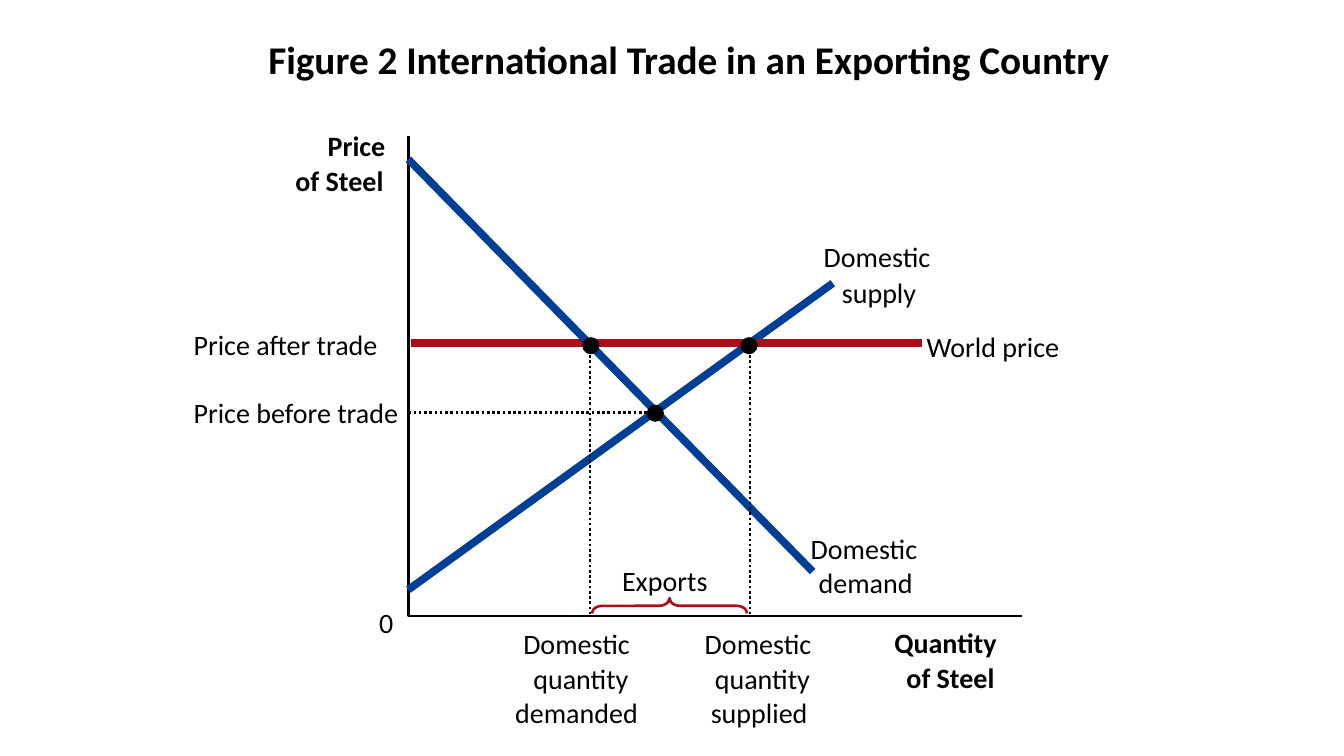
from lxml import etree
from pptx import Presentation
from pptx.dml.color import RGBColor
from pptx.enum.dml import MSO_LINE
from pptx.enum.shapes import MSO_CONNECTOR, MSO_SHAPE
from pptx.enum.text import MSO_ANCHOR, MSO_AUTO_SIZE, PP_ALIGN
from pptx.oxml.ns import qn
from pptx.util import Pt

EMU_PER_PX = 9144
STRAIGHT = MSO_CONNECTOR.STRAIGHT
OVAL, BRACE = MSO_SHAPE.OVAL, MSO_SHAPE.LEFT_BRACE
DOTTED = MSO_LINE.ROUND_DOT
MIDDLE, CENTER = MSO_ANCHOR.MIDDLE, PP_ALIGN.CENTER
FIT_SHAPE, NO_FIT = MSO_AUTO_SIZE.SHAPE_TO_FIT_TEXT, MSO_AUTO_SIZE.NONE
BLACK, BLUE, RED = "000000", "003F95", "AD0D1B"
THIN, THICK = 1.88, 5.5
FONT = "Calibri"
LINE_HEIGHT = 34
DOT = 17


def px(*lengths):
    return [round(n * EMU_PER_PX) for n in lengths]


def rgb(color):
    return RGBColor.from_string(color)


def format_runs(p, size, bold):
    for r in p.runs:
        r.font.name = FONT
        r.font.size = Pt(size)
        r.font.bold = bold
        r.font.color.rgb = rgb(BLACK)


def format_line(line, color, width):
    line.color.rgb = rgb(color)
    line.width = Pt(width)


def add_title(s, box):
    sp = s.shapes.title
    sp.left, sp.top, sp.width, sp.height = px(*box)
    tf = sp.text_frame
    tf.text = "Figure 2 International Trade in an Exporting Country"
    tf.auto_size = NO_FIT
    tf.vertical_anchor = MIDDLE
    p = tf.paragraphs[0]
    p.alignment = CENTER
    p.line_spacing = 0.8
    format_runs(p, 28, True)


def add_labels(shapes, box, labels, bold=False):
    for text, x, y, w in labels:
        tb = shapes.add_textbox(*px(box[0] + x, box[1] + y, w, LINE_HEIGHT))
        tf = tb.text_frame
        tf.margin_left = tf.margin_top = tf.margin_right = tf.margin_bottom = 0
        tf.word_wrap = False
        tf.auto_size = FIT_SHAPE
        tf.text = text
        format_runs(tf.paragraphs[0], 20, bold)


def add_line(shapes, box, start, end, color, width, dash=None):
    x, y = box[:2]
    line = shapes.add_connector(
        STRAIGHT, *px(x + start[0], y + start[1], x + end[0], y + end[1]))
    format_line(line.line, color, width)
    if dash:
        line.line.dash_style = dash
    etree.SubElement(line._element.spPr, qn("a:effectLst"))


def add_dot(shapes, box, x, y):
    dot = shapes.add_shape(
        OVAL, *px(box[0] + x - DOT / 2, box[1] + y - DOT / 2, DOT, DOT))
    dot.shadow.inherit = False
    dot.fill.solid()
    dot.fill.fore_color.rgb = rgb(BLACK)
    dot.line.fill.background()


def add_axes(s, box):
    x, y, w, h = box
    builder = s.shapes.build_freeform(*px(x, y), scale=1.0)
    builder.add_line_segments([px(x, y + h), px(x + w, y + h)], close=False)
    axes = builder.convert_to_shape()
    axes.shadow.inherit = False
    axes.fill.background()
    format_line(axes.line, BLACK, THIN)
    add_labels(s.shapes, box, [("Price", -80, -8, 58), ("of Steel", -112, 27, 88)], True)
    add_labels(s.shapes, box, [("0", -29, 466, 14)])
    add_labels(s.shapes, box, [("Quantity", 482, 486, 102), ("of Steel", 494, 520, 88)], True)


def add_curve(s, box, start, end, color, labels):
    shapes = s.shapes.add_group_shape().shapes
    add_line(shapes, box, start, end, color, THICK)
    add_labels(shapes, box, labels)


def add_exports(s, box):
    shapes = s.shapes.add_group_shape().shapes
    center_x, center_y, span, depth = box[0] + 259, box[1] + 466, 154, 15
    brace = shapes.add_shape(
        BRACE, *px(center_x - depth / 2, center_y - span / 2, depth, span))
    brace.rotation = 90
    brace.adjustments[0] = 0.7
    brace.shadow.inherit = False
    brace.fill.background()
    format_line(brace.line, RED, THIN)
    add_labels(shapes, box, [("Exports", 212, 424, 86)])


def add_guide(s, box, start, end, dot, labels):
    shapes = s.shapes.add_group_shape().shapes
    add_line(shapes, box, start, end, BLACK, THIN, DOTTED)
    add_dot(shapes, box, *dot)
    add_labels(shapes, box, labels)


def add_diagram(s, box):
    base = box[3]
    add_axes(s, box)
    add_curve(s, box, (0, 450), (421, 146), BLUE,
              [("Domestic", 412, 103, 107), ("supply", 430, 138, 74)])
    add_curve(s, box, (3, 205), (509, 205), RED,
              [("Price after trade", -213, 190, 185), ("World price", 514, 192, 133)])
    add_curve(s, box, (0, 23), (401, 432), BLUE,
              [("Domestic", 399, 392, 107), ("demand", 407, 426, 94)])
    add_exports(s, box)
    add_guide(s, box, (0, 274), (244, 274), (245, 275),
              [("Price before trade", -213, 257, 205)])
    for x, dot_x, label_x, last, last_x, last_w in (
            (180, 181, 114, "demanded", 106, 123),
            (339, 338, 294, "supplied", 300, 97)):
        add_guide(s, box, (x, 207), (x, base), (dot_x, 208),
                  [("Domestic", label_x, base + 11, 107),
                   ("quantity", label_x + 10, base + 45, 97),
                   (last, last_x, base + 79, last_w)])


def main():
    prs = Presentation()
    prs.slide_width, prs.slide_height = px(1333, 750)
    s = prs.slides.add_slide(prs.slide_layouts[5])
    add_title(s, (233, 25, 900, 75))
    add_diagram(s, (405, 135, 609, 476))
    prs.save("out.pptx")


if __name__ == "__main__":
    main()
